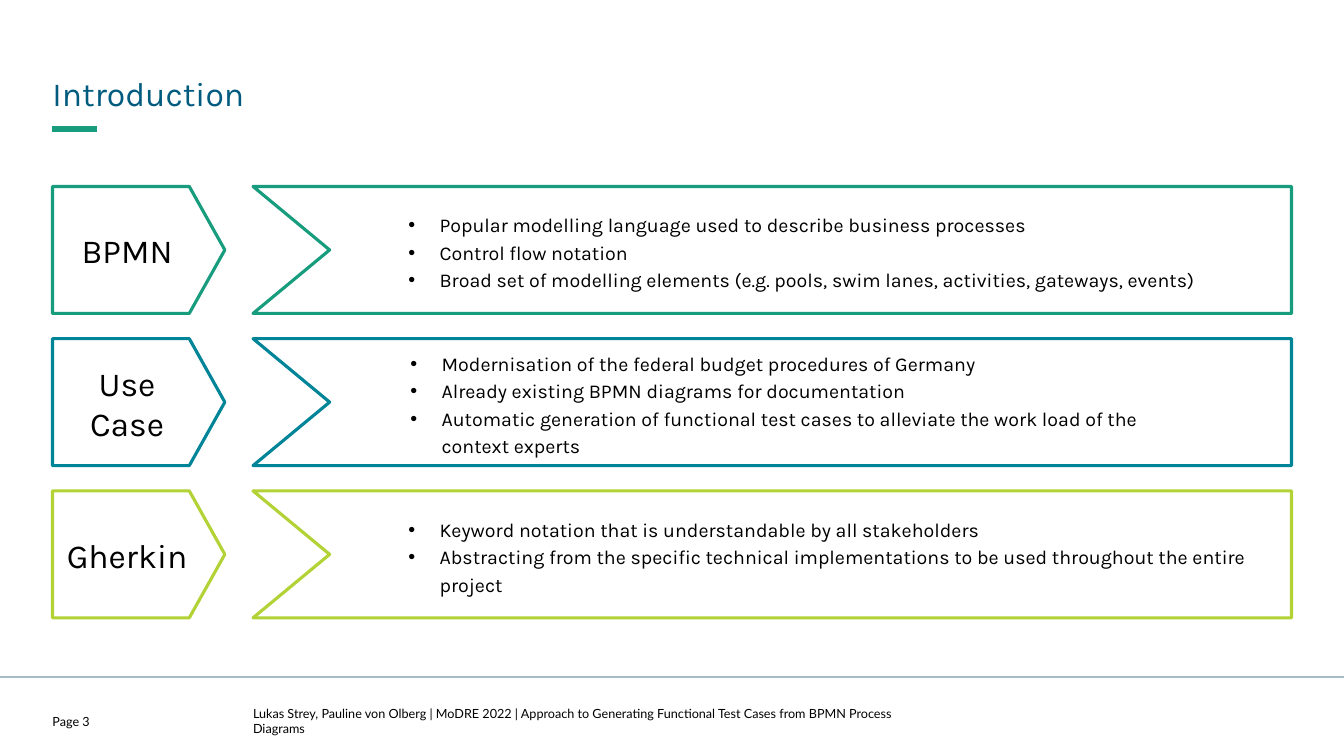
"""Build the Introduction slide: three labelled arrow rows with bullet points."""
from lxml.etree import SubElement
from pptx import Presentation
from pptx.dml.color import RGBColor
from pptx.enum.shapes import MSO_CONNECTOR, MSO_SHAPE
from pptx.enum.text import MSO_ANCHOR, PP_ALIGN
from pptx.oxml.ns import qn
from pptx.util import Pt

PX = 9144
LEFT, PANEL_LEFT, PANEL_RIGHT = 52, 251, 1281
ROW_TOP, ROW_STEP, ROW_HEIGHT = 185, 151, 126
ROWS = [
    ("BPMN", "179C7D", 405, 786, [
        "Popular modelling language used to describe business processes",
        "Control flow notation",
        "Broad set of modelling elements (e.g. pools, swim lanes, activities, gateways, events)",
    ]),
    ("Use Case", "008598", 407, 786, [
        "Modernisation of the federal budget procedures of Germany",
        "Already existing BPMN diagrams for documentation",
        "Automatic generation of functional test cases to alleviate the work load of the context experts",
    ]),
    ("Gherkin", "B2D235", 405, 848, [
        "Keyword notation that is understandable by all stakeholders",
        "Abstracting from the specific technical implementations to be used throughout the entire project",
    ]),
]
FOOTER = ("Lukas Strey, Pauline von Olberg | MoDRE 2022 | "
          "Approach to Generating Functional Test Cases from BPMN Process Diagrams")


def color(hex_value):
    """Turn a hex string into a colour."""
    return RGBColor.from_string(hex_value)


def write(box, area, text, size, font="Karla", ink="000000",
          align=PP_ALIGN.LEFT, anchor=MSO_ANCHOR.MIDDLE, bullets=False):
    """Place a text shape and fill it with formatted paragraphs."""
    box.left, box.top, box.width, box.height = [value * PX for value in area]
    frame = box.text_frame
    frame.margin_left = frame.margin_top = frame.margin_right = frame.margin_bottom = 0
    frame.text = text
    frame.word_wrap = True
    frame.vertical_anchor = anchor
    for para in frame.paragraphs:
        para.alignment = align
        if bullets:
            properties = para._p.get_or_add_pPr()
            properties.set("marL", str(31 * PX))
            properties.set("indent", str(-31 * PX))
            SubElement(properties, qn("a:buFont"), typeface="Arial")
            SubElement(properties, qn("a:buChar"), char="•")
            para.line_spacing = Pt(19.6)
        for span in para.runs:
            span.font.size = Pt(size)
            span.font.name = font
            span.font.color.rgb = color(ink)


deck = Presentation()
deck.slide_width, deck.slide_height = 1333 * PX, 750 * PX
page = deck.slides.add_slide(deck.slide_layouts[5])
shapes = page.shapes

for start, end, y, hex_value, weight in [
    (0, 1333, 672, "A6BBC8", 1.5),
    (LEFT, 96, 128, "179C7D", 4.25),
]:
    rule = shapes.add_connector(MSO_CONNECTOR.STRAIGHT, start * PX, y * PX, end * PX, y * PX)
    rule.line.color.rgb = color(hex_value)
    rule.line.width = Pt(weight)
    SubElement(rule._element.spPr, qn("a:effectLst"))

write(shapes.title, (LEFT, 70, 1228, 42), "Introduction", 24,
      ink="005B7F", anchor=MSO_ANCHOR.BOTTOM)
shapes.title.text_frame.paragraphs[0].line_spacing = 1.1

for index, (label, accent, list_left, list_width, points) in enumerate(ROWS):
    top = ROW_TOP + index * ROW_STEP
    bottom = top + ROW_HEIGHT
    outline = shapes.build_freeform(PANEL_LEFT, top, scale=PX)
    outline.add_line_segments([
        (PANEL_RIGHT, top), (PANEL_RIGHT, bottom), (PANEL_LEFT, bottom),
        (327, top + ROW_HEIGHT // 2),
    ])
    panel = outline.convert_to_shape()
    panel.fill.solid()
    panel.fill.fore_color.rgb = color("FFFFFF")
    arrow = shapes.add_shape(MSO_SHAPE.PENTAGON, LEFT * PX, top * PX, 171 * PX, ROW_HEIGHT * PX)
    arrow.adjustments[0] = 0.28
    arrow.fill.background()
    for shape in (panel, arrow):
        shape.shadow.inherit = False
        shape.line.color.rgb = color(accent)
        shape.line.width = Pt(2.25)
    write(shapes.add_textbox(0, 0, 0, 0), (60, top + 16, 132, 95), label, 24,
          align=PP_ALIGN.CENTER)
    write(shapes.add_textbox(0, 0, 0, 0), (list_left, top + 22, list_width, 83),
          "\n".join(points), 14, bullets=True)

write(shapes.add_textbox(0, 0, 0, 0), (LEFT, 708, 79, 15), "Page 3", 9, font="Lato")
write(shapes.add_textbox(0, 0, 0, 0), (PANEL_LEFT, 707, 680, 16), FOOTER, 9, font="Lato")

deck.save("out.pptx")
